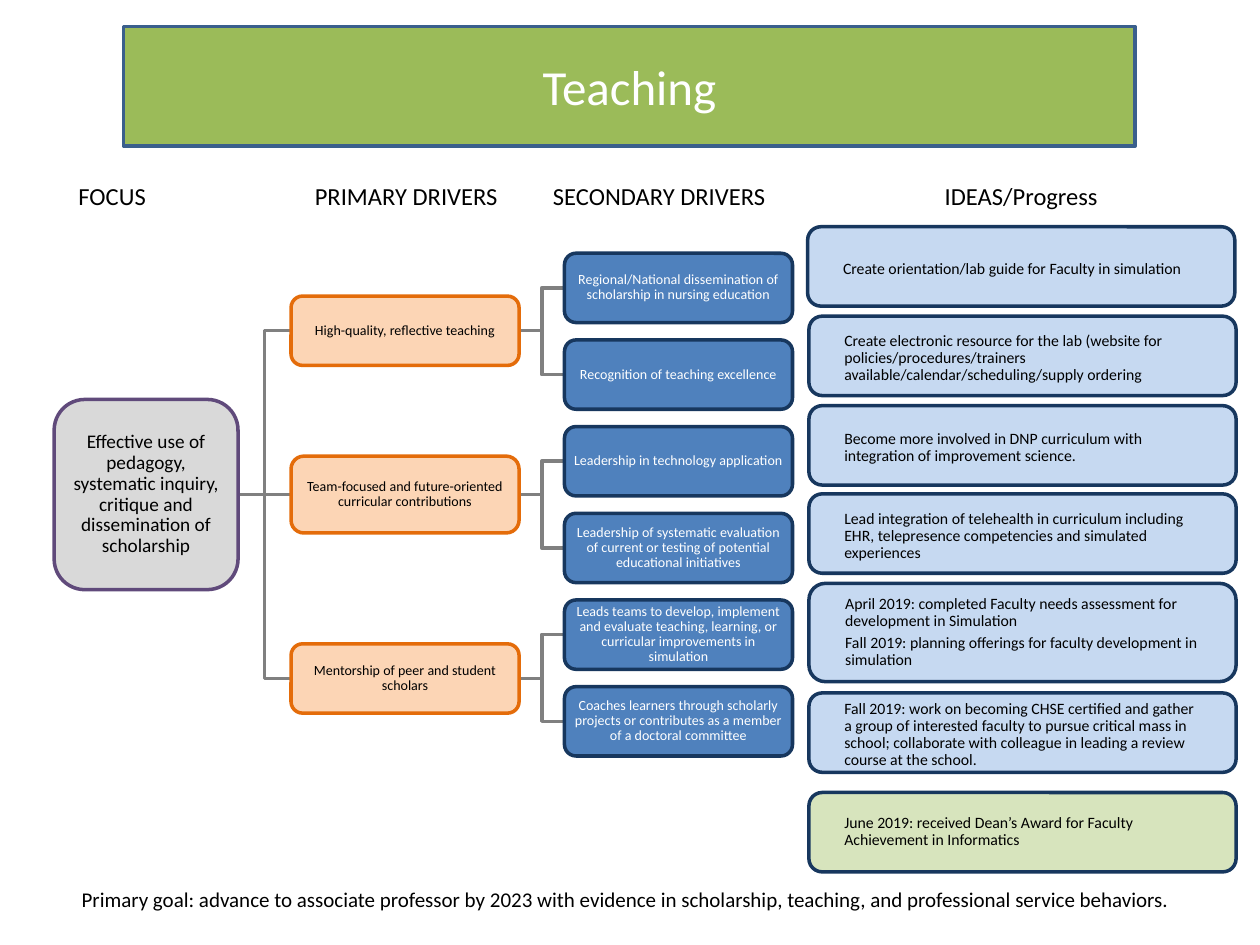
from lxml import etree
from pptx import Presentation
from pptx.dml.color import RGBColor
from pptx.enum.shapes import MSO_CONNECTOR, MSO_SHAPE
from pptx.enum.text import MSO_ANCHOR, PP_ALIGN
from pptx.oxml.ns import qn
from pptx.util import Inches, Pt

ROUNDED = MSO_SHAPE.ROUNDED_RECTANGLE
ELBOW, STRAIGHT = MSO_CONNECTOR.ELBOW, MSO_CONNECTOR.STRAIGHT
LEFT, CENTER = PP_ALIGN.LEFT, PP_ALIGN.CENTER
MIDDLE, TOP = MSO_ANCHOR.MIDDLE, MSO_ANCHOR.TOP
LEFT_SIDE, RIGHT_SIDE = 1, 3

COLORS = {
    "black": "000000", "white": "FFFFFF", "gray": "808080",
    "light gray": "D9D9D9", "purple": "604A7B",
    "peach": "FCD5B5", "orange": "E46C0A",
    "blue": "4F81BD", "navy": "17375E", "pale blue": "C6D9F1",
    "green": "9BBB59", "pale green": "D7E4BD", "steel": "3A5F8C",
}

TITLE = "Teaching"
GOAL = ("Primary goal: advance to associate professor by 2023 with evidence in "
        "scholarship, teaching, and professional service behaviors.")
# text, left, width, alignment
HEADINGS = [
    ("FOCUS", 0.34, 1.1, CENTER),
    ("PRIMARY DRIVERS", 2.4, 1.95, LEFT),
    ("SECONDARY DRIVERS", 4.29, 1.95, LEFT),
    ("IDEAS/Progress", 6.41, 3.39, CENTER),
]
FOCUS = ("Effective use of pedagogy, systematic inquiry, critique and "
         "dissemination of scholarship")
# primary driver, top, height, its secondary drivers
DRIVERS = [
    ("High-quality, reflective teaching", 2.35, 0.55, [
        "Regional/National dissemination of scholarship in nursing education",
        "Recognition of teaching excellence"]),
    ("Team-focused and future-oriented curricular contributions", 3.62, 0.61, [
        "Leadership in technology application",
        "Leadership of systematic evaluation of current or testing of potential "
        "educational initiatives"]),
    ("Mentorship of peer and student scholars", 5.11, 0.55, [
        "Leads teams to develop, implement and evaluate teaching, learning, or "
        "curricular improvements in simulation",
        "Coaches learners through scholarly projects or contributes as a member "
        "of a doctoral committee"]),
]
# paragraphs, left, top, height, top inset, fill
IDEAS = [
    (["Create orientation/lab guide for Faculty in simulation"],
     6.41, 1.8, 0.63, 0.04, "pale blue"),
    (["Create electronic resource for the lab (website for policies/procedures/"
      "trainers available/calendar/scheduling/supply ordering"],
     6.42, 2.51, 0.63, 0.04, "pale blue"),
    (["Become more involved in DNP curriculum with integration of improvement "
      "science."], 6.42, 3.22, 0.63, 0.04, "pale blue"),
    (["Lead integration of telehealth in curriculum including EHR, telepresence "
      "competencies and simulated experiences"],
     6.42, 3.92, 0.63, 0.04, "pale blue"),
    (["April 2019: completed Faculty needs assessment for development in "
      "Simulation",
      "Fall 2019: planning offerings for faculty development in simulation"],
     6.42, 4.63, 0.78, 0, "pale blue"),
    (["Fall 2019: work on becoming CHSE certified and gather a group of "
      "interested faculty to pursue critical mass in school; collaborate with "
      "colleague in leading a review course at the school."],
     6.42, 5.5, 0.63, 0.04, "pale blue"),
    (["June 2019: received Dean’s Award for Faculty Achievement in Informatics"],
     6.42, 6.29, 0.63, 0, "pale green"),
]
DRIVER_WIDTH, DRIVER_HEIGHT = 1.81, 0.55
PRIMARY_LEFT, SECONDARY_LEFT = 2.31, 4.48
SECONDARY_TOP, SECONDARY_STEP = 2.01, 0.688


def color(name):
    return RGBColor.from_string(COLORS[name])


def write(box, paragraphs, size, ink="black", align=CENTER, anchor=MIDDLE,
          insets=(0.1, 0.05, 0.1, 0.05), **spacing):
    """Fill a text frame; insets run left, top, right, bottom."""
    frame = box.text_frame
    frame.word_wrap = True
    frame.vertical_anchor = anchor
    for side, inset in zip(("left", "top", "right", "bottom"), insets):
        setattr(frame, f"margin_{side}", Inches(inset))
    for index, text in enumerate(paragraphs):
        para = frame.add_paragraph() if index else frame.paragraphs[0]
        para.alignment = align
        for name, value in spacing.items():
            setattr(para, name, value)
        span = para.add_run()
        span.text = text
        font = {"name": "Calibri", "size": Pt(size)}
        for name, value in font.items():
            setattr(span.font, name, value)
        span.font.color.rgb = color(ink)


def paint(box, fill, line):
    box.fill.solid()
    box.fill.fore_color.rgb = color(fill)
    box.line.color.rgb = color(line)
    box.line.width = Pt(2)


def add_box(page, place, paragraphs, fill, line, size, **text_format):
    box = page.shapes.add_shape(ROUNDED, *map(Inches, place))
    box.shadow.inherit = False
    paint(box, fill, line)
    write(box, paragraphs, size, line_spacing=0.9, space_after=Pt(size * 0.35),
          **text_format)
    return box


def add_label(page, place, text, size, align):
    label = page.shapes.add_textbox(*map(Inches, place))
    write(label, [text], size, align=align, anchor=TOP)


def join(page, start, end, kind=ELBOW):
    """Link two boxes side to side, with the line behind them."""
    link = page.shapes.add_connector(kind, 0, 0, 0, 0)
    link.begin_connect(start, RIGHT_SIDE)
    link.end_connect(end, LEFT_SIDE)
    link.line.color.rgb = color("gray")
    link.line.width = Pt(2)
    etree.SubElement(link._element.spPr, qn("a:effectLst"))
    page.shapes._spTree.insert(2, link._element)


def add_title(page):
    title = page.shapes.title
    place = {"left": 0.98, "top": 0.21, "width": 8.03, "height": 0.95}
    for name, value in place.items():
        setattr(title, name, Inches(value))
    outline = etree.SubElement(title._element.spPr, qn("a:prstGeom"),
                               prst="roundRect")
    etree.SubElement(outline, qn("a:avLst"))
    paint(title, "green", "steel")
    write(title, [TITLE], 28, "white")


def add_driver_tree(page):
    tight = (0.03, 0.03, 0.03, 0.03)
    focus = add_box(page, (0.43, 3.17, 1.46, 1.51), [FOCUS], "light gray",
                    "purple", 11, insets=(0.08, 0.08, 0.08, 0.08))
    row = 0
    for index, (name, top, height, secondary) in enumerate(DRIVERS):
        primary = add_box(page, (PRIMARY_LEFT, top, DRIVER_WIDTH, height), [name],
                          "peach", "orange", 8, insets=tight)
        join(page, focus, primary, STRAIGHT if index == 1 else ELBOW)
        for text in secondary:
            place = (SECONDARY_LEFT, SECONDARY_TOP + row * SECONDARY_STEP,
                     DRIVER_WIDTH, DRIVER_HEIGHT)
            driver = add_box(page, place, [text], "blue", "navy", 8,
                             ink="white", insets=tight)
            join(page, primary, driver)
            row += 1


def main():
    deck = Presentation()
    deck.slide_width, deck.slide_height = Inches(10), Inches(7.5)
    page = deck.slides.add_slide(deck.slide_layouts[5])
    add_title(page)
    for text, left, width, align in HEADINGS:
        add_label(page, (left, 1.39, width, 0.35), text, 14, align)
    add_driver_tree(page)
    for paragraphs, left, top, height, inset, fill in IDEAS:
        add_box(page, (left, top, 3.39, height), paragraphs, fill, "navy", 9,
                align=LEFT, insets=(0.25, inset, 0.23, 0))
    add_label(page, (0.55, 6.99, 8.9, 0.3), GOAL, 12, LEFT)
    deck.save("out.pptx")


if __name__ == "__main__":
    main()
